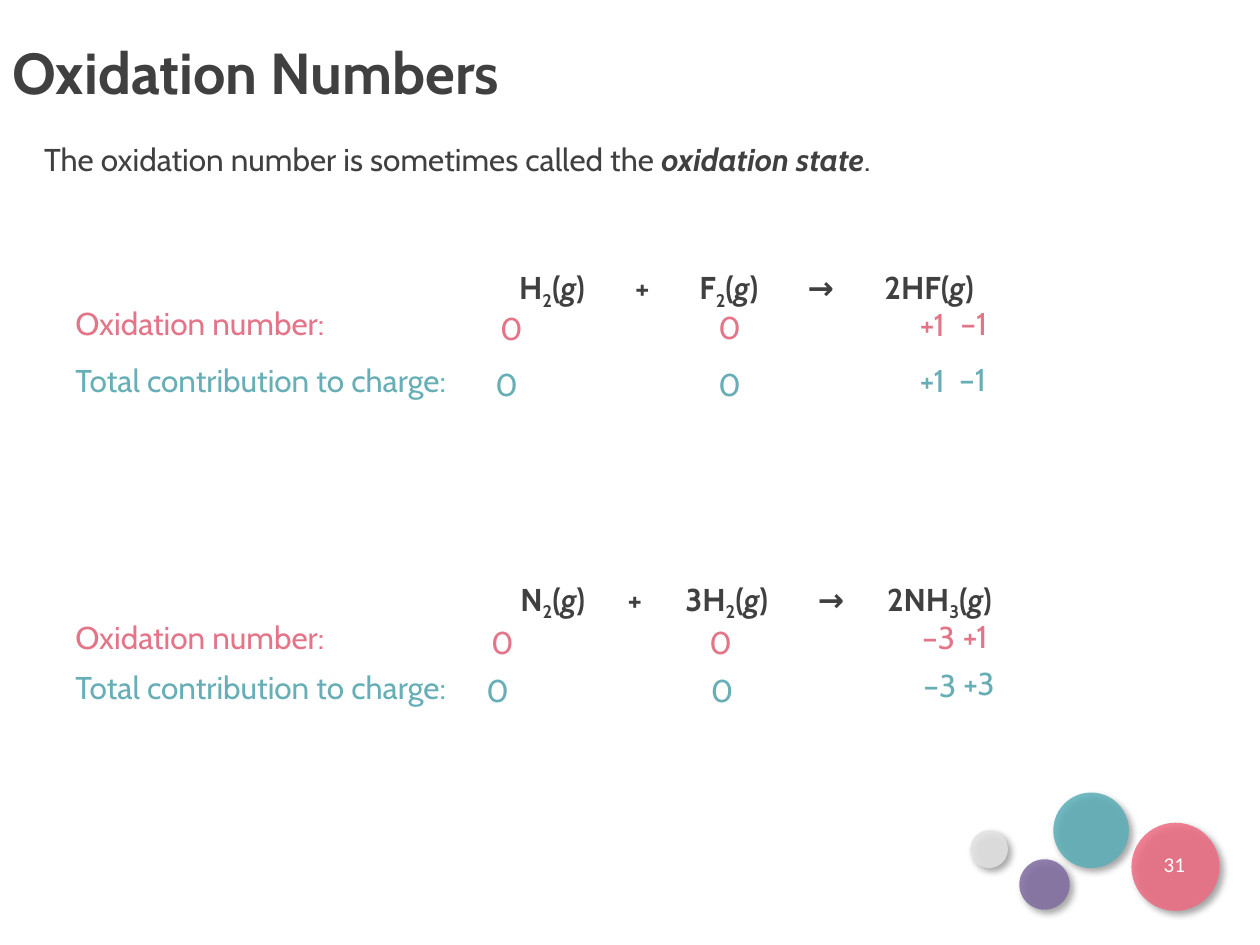
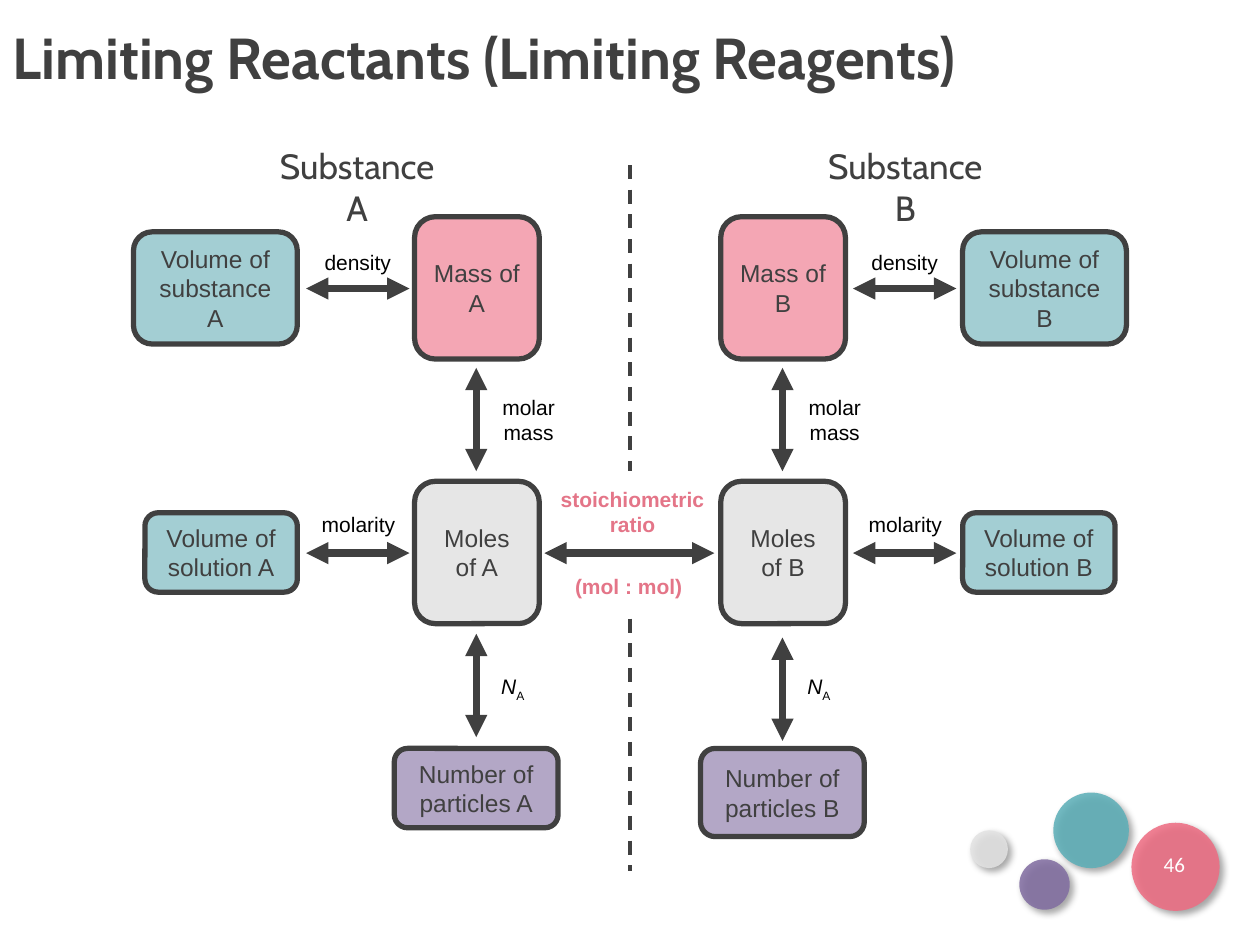
from lxml import etree
from pptx import Presentation
from pptx.dml.color import RGBColor
from pptx.enum.dml import MSO_LINE
from pptx.enum.shapes import MSO_CONNECTOR, MSO_SHAPE
from pptx.enum.text import MSO_ANCHOR, MSO_AUTO_SIZE, PP_ALIGN
from pptx.oxml.ns import qn
from pptx.util import Inches, Pt

ROUND, OVAL = MSO_SHAPE.ROUNDED_RECTANGLE, MSO_SHAPE.OVAL
STRAIGHT, DASH = MSO_CONNECTOR.STRAIGHT, MSO_LINE.DASH
LEFT, CENTER = PP_ALIGN.LEFT, PP_ALIGN.CENTER
TOP, MIDDLE = MSO_ANCHOR.TOP, MSO_ANCHOR.MIDDLE
FIXED = MSO_AUTO_SIZE.NONE

COLORS = {
    "ink": "404040", "black": "000000", "white": "FFFFFF",
    "rose": "E47588", "teal": "67AEB6",
    "pink": "EE6C82", "aqua": "5CAFB8", "plum": "816DA1", "gray": "E3E3E3",
}
HEAD, LABEL = "Cabin", "Arial"

# Corner bubbles: left, top, size, colour
BUBBLES = [
    (7.7, 6.59, 0.3, "gray"), (8.09, 6.82, 0.4, "plum"),
    (8.36, 6.29, 0.6, "aqua"), (8.98, 6.53, 0.7, "pink"),
]

# Equation terms: a trailing flag marks b(old), i(talic) or _ (subscript)
GAS = [("(", "b"), ("g", "bi"), (")", "b")]
FLUORINE = [("H", "b"), ("2", "b_"), *GAS, ("\t+\tF", "b"), ("2", "b_"), *GAS,
            ("\t→\t2HF", "b"), *GAS]
AMMONIA = [("N", "b"), ("2", "b_"), *GAS, ("\t+\t3H", "b"), ("2", "b_"), *GAS,
           ("\t→\t2NH", "b"), ("3", "b_"), *GAS]


def rgb(name):
    return RGBColor.from_string(COLORS[name])


def place(shape, at):
    shape.left, shape.top, shape.width, shape.height = map(Inches, at)


def add_runs(para, runs, size, font, color, align=LEFT, space=None):
    """Fill a paragraph from a string or from (text, flags) pairs."""
    para.alignment = align
    if space:
        para.line_spacing = space
    for words, flags in [(runs, "")] if isinstance(runs, str) else runs:
        run = para.add_run()
        run.text = words
        run.font.size, run.font.name = Pt(size), font
        run.font.color.rgb = rgb(color)
        run.font.bold, run.font.italic = "b" in flags, "i" in flags
        if "_" in flags:
            run._r.get_or_add_rPr().set("baseline", "-25000")


def add_text(slide, at, lines, size=18, font=HEAD, color="ink", align=CENTER,
             space=None, wrap=True, anchor=TOP):
    box = slide.shapes.add_textbox(*map(Inches, at))
    frame = box.text_frame
    frame.word_wrap, frame.vertical_anchor = wrap, anchor
    for i, runs in enumerate(lines):
        para = frame.add_paragraph() if i else frame.paragraphs[0]
        add_runs(para, runs, size, font, color, align, space)
    return box


def add_label(slide, at, *lines, color="black", wrap=False):
    add_text(slide, at, lines, 12, LABEL, color, wrap=wrap)


def add_solid(slide, kind, at, color, alpha):
    shape = slide.shapes.add_shape(kind, *map(Inches, at))
    shape.shadow.inherit = False
    shape.fill.solid()
    shape.fill.fore_color.rgb = rgb(color)
    tint = shape._element.spPr.find(".//" + qn("a:srgbClr"))
    etree.SubElement(tint, qn("a:alpha"), val=str(alpha * 1000))
    return shape


def add_node(slide, at, words, color, alpha=60):
    node = add_solid(slide, ROUND, at, color, alpha)
    node.line.color.rgb, node.line.width = rgb("ink"), Pt(3)
    frame = node.text_frame
    frame.word_wrap, frame.vertical_anchor = True, MIDDLE
    frame.margin_left = frame.margin_right = Inches(0.09)
    add_runs(frame.paragraphs[0], words, 14, LABEL, "ink", CENTER)


def add_line(slide, x1, y1, x2, y2, width):
    line = slide.shapes.add_connector(STRAIGHT, *map(Inches, (x1, y1, x2, y2)))
    line.line.color.rgb, line.line.width = rgb("ink"), Pt(width)
    etree.SubElement(line._element.spPr, qn("a:effectLst"))
    return line


def add_arrow(slide, x1, y1, x2, y2):
    stroke = add_line(slide, x1, y1, x2, y2, 4.25).line._get_or_add_ln()
    for end in ("a:headEnd", "a:tailEnd"):
        etree.SubElement(stroke, qn(end), type="triangle")


def add_bubble(slide, x, y, size, color):
    bubble = add_solid(slide, OVAL, (x, y, size, size), color, 86)
    bubble.line.fill.background()
    glow = bubble._element.spPr.find(qn("a:effectLst"))
    drop = etree.SubElement(glow, qn("a:outerShdw"), blurRad=str(Pt(4)),
                            dist=str(Pt(3)), dir=str(45 * 60000))
    shade = etree.SubElement(drop, qn("a:srgbClr"), val=COLORS["black"])
    etree.SubElement(shade, qn("a:alpha"), val="40000")


def add_slide(deck, layout, title, top, number):
    """Start a slide with the shared title style, bubbles and number."""
    slide = deck.slides.add_slide(deck.slide_layouts[layout])
    place(slide.shapes.title, (0, top, 10, 0.6))
    frame = slide.shapes.title.text_frame
    frame.auto_size, frame.vertical_anchor = FIXED, MIDDLE
    add_runs(frame.paragraphs[0], [(title, "b")], 33, HEAD, "ink", space=0.9)
    for bubble in BUBBLES:
        add_bubble(slide, *bubble)
    add_text(slide, (9.13, 6.66, 0.38, 0.4), [number], 12, "Calibri", "white",
             anchor=MIDDLE)
    return slide


def add_lead(slide, at, runs):
    body = slide.placeholders[1]
    place(body, at)
    body.text_frame.auto_size = FIXED
    para = body.text_frame.paragraphs[0]
    add_runs(para, runs, 18, HEAD, "ink")
    para.space_before = Pt(0)
    props = para._p.get_or_add_pPr()
    props.set("marL", "0")
    props.set("indent", "0")
    etree.SubElement(props, qn("a:buNone"))


def add_formula(slide, at, inset, stops, runs):
    """One equation, with its terms set on tab stops."""
    box = add_text(slide, at, [runs], align=LEFT, space=0.81)
    box.text_frame.margin_left = Inches(inset)
    props = box.text_frame.paragraphs[0]._p.get_or_add_pPr()
    tabs = etree.SubElement(props, qn("a:tabLst"))
    for stop in stops:
        etree.SubElement(tabs, qn("a:tab"), pos=str(Inches(stop)), algn="l")


def add_counts(slide, y, name, color, values):
    """A row of values: each is (text, left, top, width)."""
    add_text(slide, (0.5, y, 3.25, 0.35), [name], color=color, align=LEFT,
             space=0.81)
    for words, x, top, width in values:
        add_text(slide, (x, top, width, 0.35), [words], color=color, space=0.81)


def build_numbers(deck):
    slide = add_slide(deck, 1, "Oxidation Numbers", 0.3, "31")
    add_lead(slide, (0.25, 1.06, 9.5, 0.4), [
        ("The oxidation number is sometimes called the ", ""),
        ("oxidation state", "bi"), (".", "")])
    number, charge = "Oxidation number:", "Total contribution to charge:"

    # Hydrogen and fluorine
    add_formula(slide, (2.71, 2.11, 6.42, 0.35), 1.41,
                (0.92, 1.43, 2.29, 2.9), FLUORINE)
    add_counts(slide, 2.42, number, "rose", [
        ("0", 3.87, 2.46, 0.28), ("0", 5.58, 2.45, 0.42),
        ("+1", 7.13, 2.43, 0.54), ("–1", 7.46, 2.42, 0.54)])
    add_counts(slide, 2.87, charge, "teal", [
        ("0", 3.81, 2.9, 0.42), ("0", 5.58, 2.9, 0.42),
        ("+1", 7.13, 2.87, 0.54), ("–1", 7.45, 2.86, 0.54)])

    # Nitrogen and hydrogen
    add_formula(slide, (2.79, 4.58, 6.42, 0.35), 1.34,
                (0.85, 1.31, 2.36, 2.91), AMMONIA)
    add_counts(slide, 4.91, number, "rose", [
        ("0", 3.8, 4.95, 0.28), ("0", 5.51, 4.95, 0.42),
        ("–3", 7.18, 4.91, 0.54), ("+1", 7.47, 4.9, 0.54)])
    add_counts(slide, 5.31, charge, "teal", [
        ("0", 3.74, 5.33, 0.42), ("0", 5.52, 5.33, 0.42),
        ("–3", 7.19, 5.29, 0.54), ("+3", 7.5, 5.28, 0.54)])


def add_side(slide, name, mid, arm, vol, sol, head, low, tall):
    """One substance: mid is its main column, arm its sideways arrows."""
    axis = mid + 0.49
    add_text(slide, (head, 1.1, 1.57, 0.44), [f"Substance {name}"], 20)
    # Boxes
    add_node(slide, (vol, 1.84, 1.3, 0.89), f"Volume of substance {name}", "teal")
    add_node(slide, (sol, 4.07, 1.21, 0.63), f"Volume of solution {name}", "teal")
    add_node(slide, (mid, 1.72, 0.99, 1.13), f"Mass of {name}", "pink")
    add_node(slide, (mid, 3.82, 0.99, 1.13), f"Moles of {name}", "gray", 86)
    add_node(slide, (mid - 0.16, 5.94, 1.3, tall),
             f"Number of particles {name}", "plum")
    # Arrows
    for y in (2.29, 4.39):
        add_arrow(slide, arm, y, arm + 0.82, y)
    for y in (2.92, low):
        add_arrow(slide, axis, y, axis, y + 0.82)
    # Labels
    add_label(slide, (arm + 0.03, 1.93, 0.76, 0.3), "density")
    add_label(slide, (arm + 0.02, 4.01, 0.79, 0.3), "molarity")
    add_label(slide, (mid + 0.5, 3.08, 0.81, 0.5), "molar mass", wrap=True)
    add_label(slide, (mid + 0.58, 5.3, 0.4, 0.3), [("N", "i"), ("A", "_")],
              wrap=True)


def build_limits(deck):
    slide = add_slide(deck, 5, "Limiting Reactants (Limiting Reagents)", 0.18,
                      "46")
    add_side(slide, "A", 3.29, 2.43, 1.06, 1.15, 2.05, 5.03, 0.63)
    add_side(slide, "B", 5.72, 6.77, 7.64, 7.64, 6.4, 5.06, 0.7)

    # Link between the two sides
    add_arrow(slide, 4.32, 4.39, 5.67, 4.39)
    add_label(slide, (2.52, 3.81, 5, 0.5), [("stoichiometric", "b")],
              [("ratio", "b")], color="rose", wrap=True)
    add_label(slide, (4.46, 4.5, 1.06, 0.3), [("(mol : mol)", "b")],
              color="rose")
    for top, end in ((1.31, 3.74), (4.91, 6.91)):
        add_line(slide, 5, top, 5, end, 2).line.dash_style = DASH


def main():
    deck = Presentation()
    deck.slide_width, deck.slide_height = Inches(10), Inches(7.5)
    build_numbers(deck)
    build_limits(deck)
    deck.save("out.pptx")


if __name__ == "__main__":
    main()
